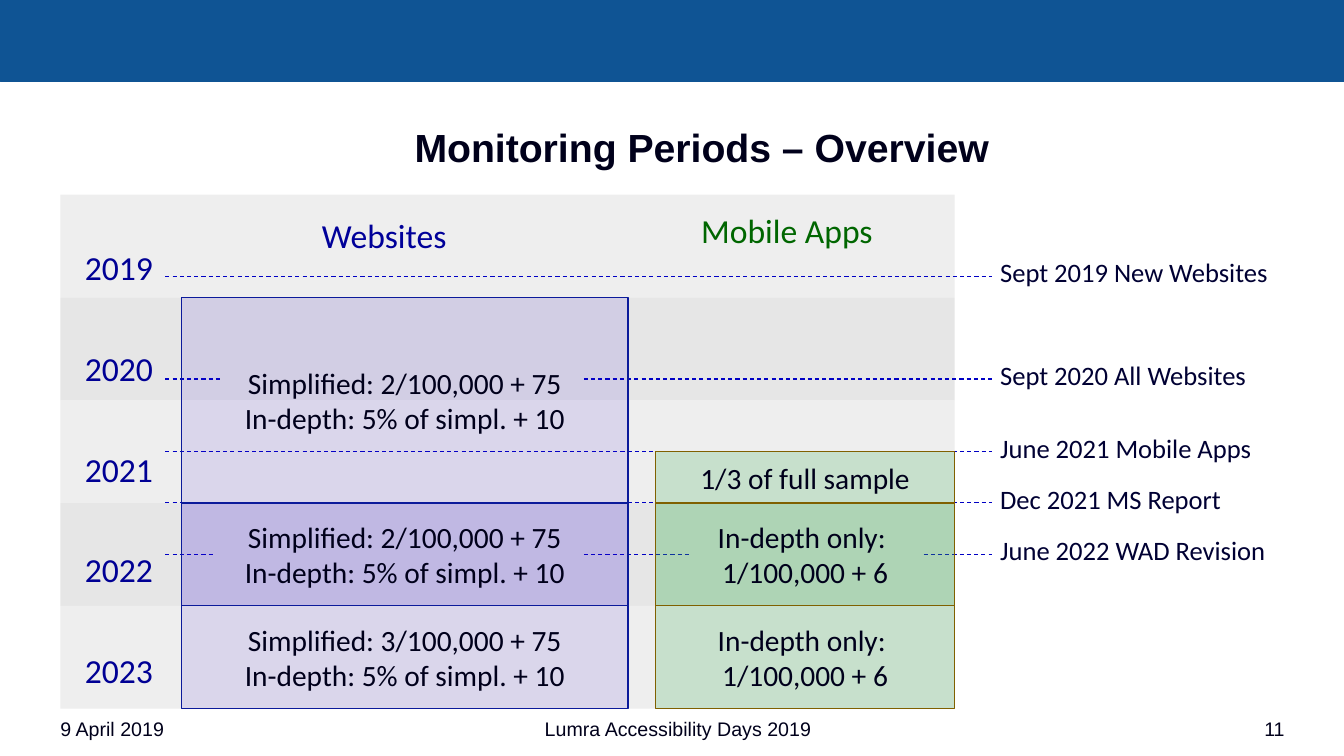
from pptx import Presentation
from pptx import util as u
from pptx.dml.color import RGBColor
from pptx.enum import dml, shapes, text
from pptx.oxml.ns import qn
from lxml import etree

Inches, Pt = u.Inches, u.Pt
BAND = RGBColor(0x0F, 0x54, 0x94)
INK = RGBColor(0x00, 0x00, 0x1B)
NAVY = RGBColor(0x00, 0x00, 0x33)
YEAR = RGBColor(0x00, 0x00, 0x94)
BLUE = RGBColor(0x00, 0x00, 0x99)
GREEN = RGBColor(0x00, 0x66, 0x00)
DASH = RGBColor(0x00, 0x00, 0xC4)
LIGHT = RGBColor(0xEE, 0xEE, 0xEE)
GREY = RGBColor(0xE6, 0xE6, 0xE6)
WEB = RGBColor(0x2B, 0x03, 0xD7)
WEB_EDGE = RGBColor(0x0B, 0x1A, 0x9A)
APP = RGBColor(0x2F, 0xAB, 0x47)
APP_EDGE = RGBColor(0x80, 0x60, 0x00)

LEFT, CENTER, RIGHT = text.PP_ALIGN.LEFT, text.PP_ALIGN.CENTER, text.PP_ALIGN.RIGHT
TOP, MIDDLE = text.MSO_ANCHOR.TOP, text.MSO_ANCHOR.MIDDLE
FIRST, ROW = 1.93, 1.02  # top of the 2019 row, height of a year


def row_top(year):
    return FIRST + (year - 2019) * ROW


def write(frame, lines, size, color, align=LEFT, font="Calibri", bold=False,
          anchor=TOP, inset=True, space=None):
    frame.word_wrap = True
    frame.vertical_anchor = anchor
    if not inset:
        for side in ("left", "top", "right", "bottom"):
            setattr(frame, "margin_" + side, 0)
    look = {"name": font, "size": Pt(size), "bold": bold}
    for i, line in enumerate(lines):
        para = frame.paragraphs[0] if i == 0 else frame.add_paragraph()
        para.text = line
        para.alignment = align
        if space:
            para.line_spacing = space
        for key, value in look.items():
            setattr(para.font, key, value)
        para.font.color.rgb = color


def add_label(slide, place, lines, size, color, **style):
    box = slide.shapes.add_textbox(*map(Inches, place))
    write(box.text_frame, lines, size, color, **style)


def add_rect(slide, place, fill, edge=None, width=1, alpha=None):
    rect = slide.shapes.add_shape(shapes.MSO_SHAPE.RECTANGLE, *map(Inches, place))
    rect.shadow.inherit = False
    rect.fill.solid()
    rect.fill.fore_color.rgb = fill
    if alpha:
        shade = rect.fill._xPr.find(".//" + qn("a:srgbClr"))
        etree.SubElement(shade, qn("a:alpha"), val=str(alpha * 1000))
    if edge is None:
        rect.line.fill.background()
    else:
        rect.line.color.rgb = edge
        rect.line.width = Pt(width)
    return rect


def add_cell(slide, place, lines, fill, edge, alpha):
    cell = add_rect(slide, place, fill, edge, alpha=alpha)
    write(cell.text_frame, lines, 21, INK, align=CENTER, anchor=MIDDLE, inset=False)


def add_dash(slide, start, end, y):
    line = slide.shapes.add_connector(
        shapes.MSO_CONNECTOR.STRAIGHT, *map(Inches, (start, y, end, y)))
    line.line.color.rgb = DASH
    line.line.width = Pt(0.75)
    line.line.dash_style = dml.MSO_LINE.DASH
    etree.SubElement(line._element.spPr, qn("a:effectLst"))


def main():
    deck = Presentation()
    deck.slide_width, deck.slide_height = Inches(13.33), Inches(7.5)
    slide = deck.slides.add_slide(deck.slide_layouts[5])

    # Top band and title
    add_rect(slide, (0, 0, 13.33, 0.81), BAND, BAND, 0.5)
    title = slide.shapes.title
    place = {"left": 1.08, "top": 1.23, "width": 11.76, "height": 0.89}
    for key, value in place.items():
        setattr(title, key, Inches(value))
    write(title.text_frame, ["Monitoring Periods – Overview"], 28, INK,
          align=CENTER, font="Arial", bold=True, space=0.9)

    # Year rows
    years = range(2019, 2024)
    for year in years:
        add_rect(slide, (0.6, row_top(year), 8.87, ROW), LIGHT if year % 2 else GREY)

    # Column heads
    add_label(slide, (2.74, 2.13, 2.14, 0.41), ["Websites"], 24, BLUE,
              align=CENTER, inset=False)
    add_label(slide, (6.5, 2.08, 2.61, 0.41), ["Mobile Apps"], 24, GREEN,
              align=CENTER, inset=False)

    # Milestones: height, label, dashed stretches
    marks = [
        (2.74, "Sept 2019 New Websites", [(1.64, 9.84)]),
        (3.76, "Sept 2020 All Websites", [(1.64, 2.21), (5.79, 9.84)]),
        (4.48, "June 2021 Mobile Apps", [(1.64, 9.84)]),
        (4.99, "Dec 2021 MS Report", [(1.64, 9.84)]),
        (5.5, "June 2022 WAD Revision", [(1.64, 2.12), (5.79, 6.86), (9.16, 9.84)]),
    ]
    for y, label, parts in marks:
        for start, end in parts:
            add_dash(slide, start, end, y)
        add_label(slide, (9.92, y - 0.2, 3.36, 0.38), [label], 19, NAVY, inset=False)

    # Website periods: first year, rows, sample rate, opacity
    for year, rows, rate, alpha in [(2020, 2, 2, 10), (2022, 1, 2, 20), (2023, 1, 3, 10)]:
        lines = [f"Simplified: {rate}/100,000 + 75", "In-depth: 5% of simpl. + 10"]
        add_cell(slide, (1.8, row_top(year), 4.43, rows * ROW), lines,
                 WEB, WEB_EDGE, alpha)

    # Mobile app periods
    depth = "In-depth only: \v1/100,000 + 6"
    for year, rows, line, alpha in [(2021.5, 0.5, "1/3 of full sample", 20),
                                    (2022, 1, depth, 30), (2023, 1, depth, 20)]:
        add_cell(slide, (6.5, row_top(year), 2.97, rows * ROW), [line],
                 APP, APP_EDGE, alpha)

    # Year labels
    add_label(slide, (0.71, 1.85, 0.94, 4.97), [str(year) for year in years], 24, YEAR,
              align=CENTER, inset=False, space=Pt(72))

    # Footer
    for left, width, line, align in [(0.5, 2.33, "9 April 2019", LEFT),
                                     (3.33, 6.79, "Lumra Accessibility Days 2019", CENTER),
                                     (10.51, 2.33, "11", RIGHT)]:
        add_label(slide, (left, 7.06, width, 0.39), [line], 14, INK,
                  align=align, font="Arial")

    deck.save("out.pptx")


if __name__ == "__main__":
    main()
